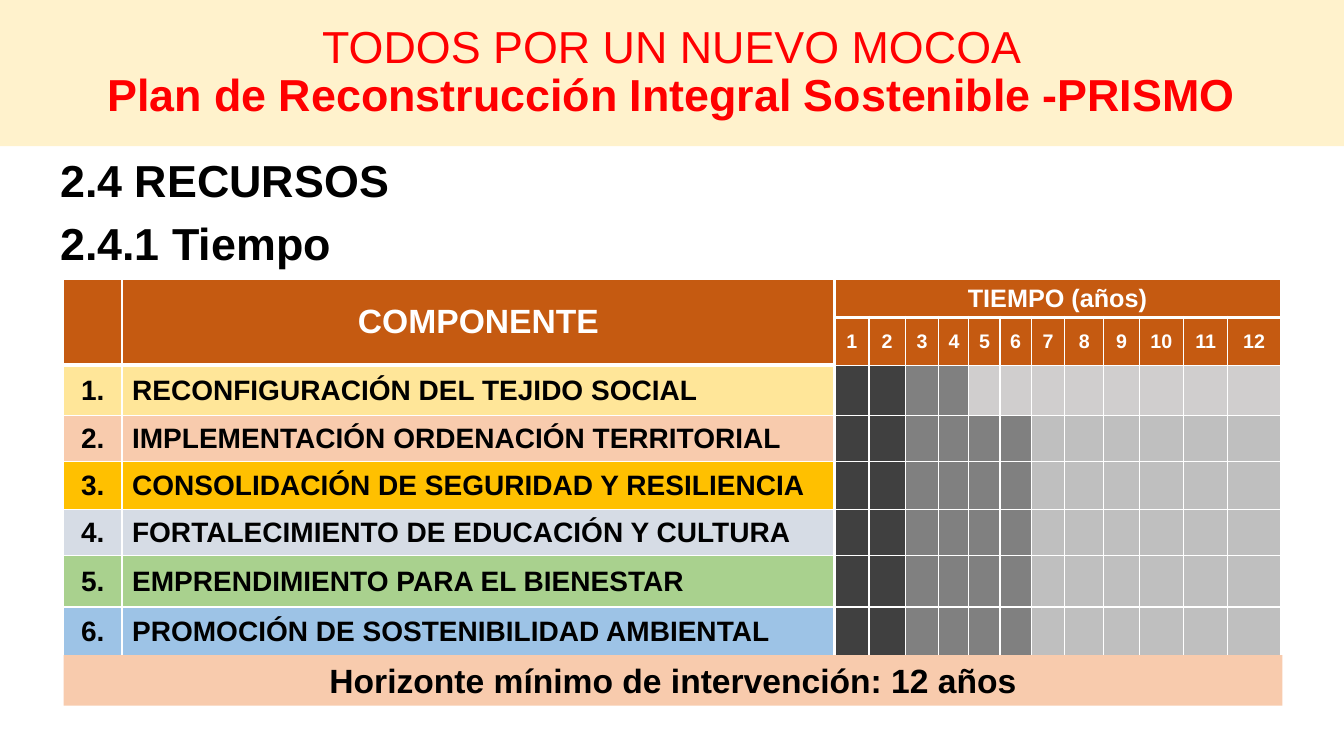
from dataclasses import dataclass

from lxml import etree
from pptx import Presentation
from pptx.dml.color import RGBColor
from pptx.enum.shapes import MSO_SHAPE
from pptx.enum.text import MSO_ANCHOR, PP_ALIGN
from pptx.oxml.ns import qn
from pptx.util import Inches, Pt

RECTANGLE = MSO_SHAPE.RECTANGLE
TOP, MIDDLE = MSO_ANCHOR.TOP, MSO_ANCHOR.MIDDLE
LEFT, CENTER = PP_ALIGN.LEFT, PP_ALIGN.CENTER


@dataclass(frozen=True)
class Theme:
    font: str = "Arial"
    black: str = "000000"
    white: str = "FFFFFF"
    title: str = "FF0000"
    title_fill: str = "FFF2CC"
    header_fill: str = "C55A11"
    footer_fill: str = "F8CBAD"
    first_phase: str = "404040"
    second_phase: str = "808080"
    heading_size: int = 32
    large_size: int = 24
    body_size: int = 20
    span_size: int = 18
    year_size: int = 14
    thin: float = 1
    medium: float = 2.25
    thick: float = 3


THEME = Theme()

YEARS = 12
FIRST_PHASE_END = 2
COLUMN_WIDTHS = [0.58, 7.07, 0.34, 0.36, 0.33, 0.3, 0.31, 0.31,
                 0.33, 0.39, 0.35, 0.44, 0.44, 0.52]
ROW_HEIGHTS = [0.38, 0.47, 0.5, 0.46, 0.47, 0.46, 0.51, 0.49]

# Name, row colour, last year of the second phase, colour of later years
COMPONENTS = [
    ("RECONFIGURACIÓN DEL TEJIDO SOCIAL", "FFE699", 4, "D0CECE"),
    ("IMPLEMENTACIÓN ORDENACIÓN TERRITORIAL", "F8CBAD", 6, "BFBFBF"),
    ("CONSOLIDACIÓN DE SEGURIDAD Y RESILIENCIA", "FFC000", 6, "BFBFBF"),
    ("FORTALECIMIENTO DE EDUCACIÓN Y CULTURA", "D6DCE5", 6, "BFBFBF"),
    ("EMPRENDIMIENTO PARA EL BIENESTAR", "A9D18E", 6, "BFBFBF"),
    ("PROMOCIÓN DE SOSTENIBILIDAD AMBIENTAL", "9DC3E6", 6, "BFBFBF"),
]


def write(para, text, size=THEME.body_size, color=THEME.black, bold=True,
          align=LEFT, line_spacing=None):
    para.alignment = align
    if line_spacing:
        para.line_spacing = line_spacing
    span = para.add_run()
    span.text = text
    span.font.name = THEME.font
    span.font.size = Pt(size)
    span.font.bold = bold
    span.font.color.rgb = RGBColor.from_string(color)


def add_band(page, box, fill, anchor):
    """Add a plain filled rectangle and return its first paragraph."""
    band = page.shapes.add_shape(RECTANGLE, *map(Inches, box))
    band.shadow.inherit = False
    band.fill.solid()
    band.fill.fore_color.rgb = RGBColor.from_string(fill)
    band.line.fill.background()
    band.text_frame.word_wrap = True
    band.text_frame.vertical_anchor = anchor
    return band.text_frame.paragraphs[0]


def add_title(page, box):
    para = add_band(page, box, THEME.title_fill, MIDDLE)
    style = dict(size=THEME.heading_size, color=THEME.title, align=CENTER,
                 line_spacing=0.9)
    write(para, "TODOS POR UN NUEVO MOCOA", bold=False, **style)
    para.add_line_break()
    write(para, "Plan de Reconstrucción Integral Sostenible -PRISMO", **style)


def add_headings(page, box):
    frame = page.shapes.add_textbox(*map(Inches, box)).text_frame
    frame.word_wrap = True
    style = dict(size=THEME.heading_size, line_spacing=0.9)
    write(frame.paragraphs[0], "2.4 RECURSOS", **style)
    para = frame.add_paragraph()
    para.space_before = Pt(10)
    write(para, "2.4.1 Tiempo", **style)


def set_borders(cell, widths):
    """Draw white borders; widths are left, right, top and bottom in points."""
    properties = cell._tc.get_or_add_tcPr()
    for index, (side, width) in enumerate(zip("LRTB", widths)):
        line = etree.Element(qn(f"a:ln{side}"), w=str(Pt(width)))
        fill = etree.SubElement(line, qn("a:solidFill"))
        etree.SubElement(fill, qn("a:srgbClr"), val=THEME.white)
        properties.insert(index, line)


def fill_cell(cell, fill):
    cell.fill.solid()
    cell.fill.fore_color.rgb = RGBColor.from_string(fill)
    cell.vertical_anchor = MIDDLE


def phase_color(year, second_phase_end, later_color):
    if year <= FIRST_PHASE_END:
        return THEME.first_phase
    return THEME.second_phase if year <= second_phase_end else later_color


def add_schedule(page, box):
    table = page.shapes.add_table(len(ROW_HEIGHTS), len(COLUMN_WIDTHS),
                                  *map(Inches, box)).table
    for column, width in zip(table.columns, COLUMN_WIDTHS):
        column.width = Inches(width)
    for row, height in zip(table.rows, ROW_HEIGHTS):
        row.height = Inches(height)

    # Fills and borders of the whole grid
    for row in range(len(ROW_HEIGHTS)):
        for column in range(len(COLUMN_WIDTHS)):
            cell = table.cell(row, column)
            if row < 2:
                fill = THEME.header_fill
            else:
                name, fill, phase_end, later = COMPONENTS[row - 2]
                if column >= 2:
                    fill = phase_color(column - 1, phase_end, later)
            fill_cell(cell, fill)
            under_header = row == 0 or (row == 1 and column < 2)
            set_borders(cell, (
                THEME.medium if column in (1, 2) else THEME.thin,
                THEME.medium if column in (0, 1) else THEME.thin,
                THEME.thick if row == 1 and column >= 2 else THEME.thin,
                THEME.thick if under_header else THEME.thin))

    # Header
    for column in (0, 1):
        table.cell(0, column).merge(table.cell(1, column))
    table.cell(0, 2).merge(table.cell(0, YEARS + 1))
    header = dict(color=THEME.white, align=CENTER)
    write(table.cell(0, 1).text_frame.paragraphs[0], "COMPONENTE",
          size=THEME.large_size, **header)
    write(table.cell(0, 2).text_frame.paragraphs[0], "TIEMPO (años)",
          size=THEME.span_size, **header)
    for year in range(1, YEARS + 1):
        write(table.cell(1, year + 1).text_frame.paragraphs[0], str(year),
              size=THEME.year_size, **header)

    # Components
    for number, component in enumerate(COMPONENTS, 1):
        row = number + 1
        write(table.cell(row, 0).text_frame.paragraphs[0], f"{number}.",
              align=CENTER)
        write(table.cell(row, 1).text_frame.paragraphs[0], component[0])


def add_footer(page, box):
    para = add_band(page, box, THEME.footer_fill, TOP)
    write(para, "Horizonte mínimo de intervención: 12 años",
          size=THEME.large_size, align=CENTER)


def main():
    deck = Presentation()
    deck.slide_width, deck.slide_height = Inches(13.33), Inches(7.5)
    page = deck.slides.add_slide(deck.slide_layouts[6])
    add_title(page, (0, 0, 13.33, 1.45))
    add_schedule(page, (0.63, 2.77, 12.09, 3.67))
    add_footer(page, (0.63, 6.5, 12.09, 0.5))
    add_headings(page, (0.5, 1.53, 9.54, 1.21))
    deck.save("out.pptx")


if __name__ == "__main__":
    main()
